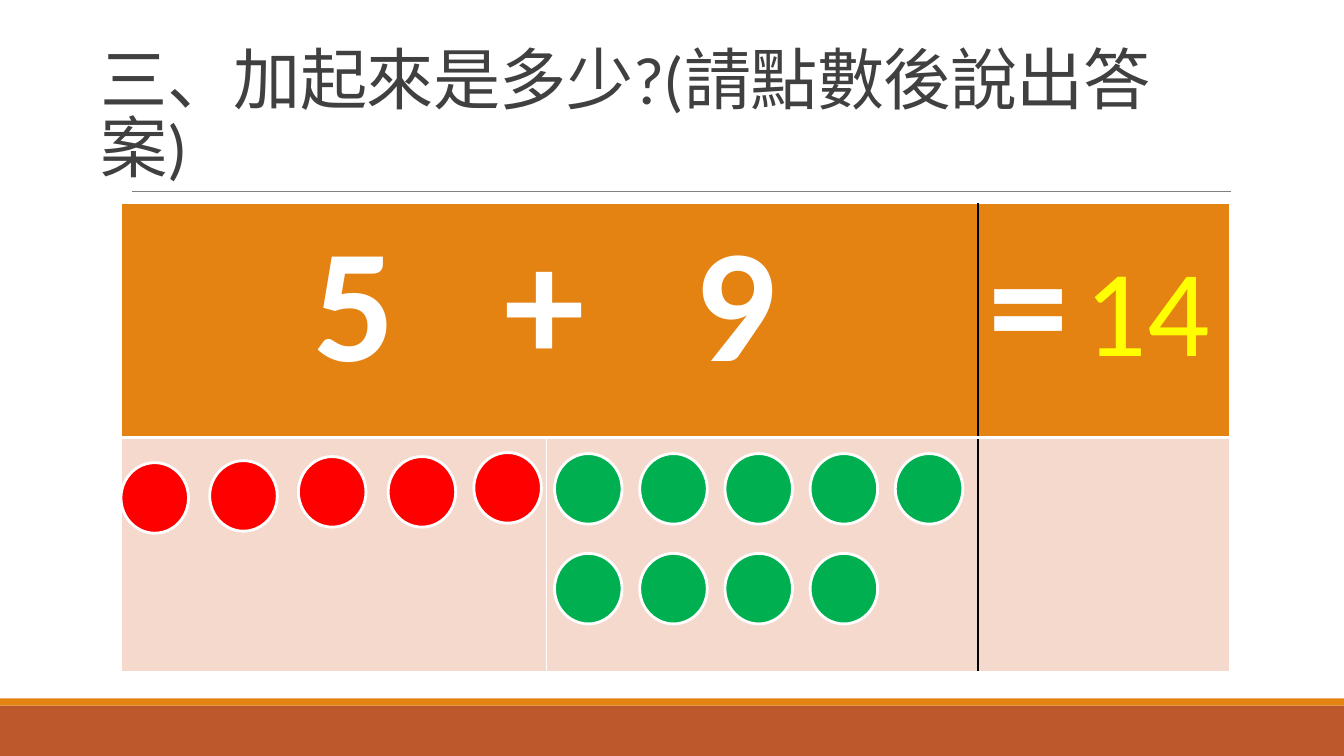
from lxml import etree
from pptx import Presentation
from pptx.dml.color import RGBColor
from pptx.enum.shapes import MSO_CONNECTOR, MSO_SHAPE
from pptx.enum.text import MSO_ANCHOR, MSO_AUTO_SIZE, PP_ALIGN
from pptx.oxml.ns import qn
from pptx.util import Inches, Pt

RECTANGLE = MSO_SHAPE.RECTANGLE
OVAL = MSO_SHAPE.OVAL
STRAIGHT = MSO_CONNECTOR.STRAIGHT
TOP = MSO_ANCHOR.TOP
BOTTOM = MSO_ANCHOR.BOTTOM
LEFT = PP_ALIGN.LEFT
CENTER = PP_ALIGN.CENTER
FIT_SHAPE = MSO_AUTO_SIZE.SHAPE_TO_FIT_TEXT
NO_FIT = MSO_AUTO_SIZE.NONE

WHITE, BLACK = "FFFFFF", "000000"
ORANGE, RUST, BLUSH = "E48312", "BD582C", "F5D9CC"
RED, GREEN, YELLOW = "FF0000", "00B050", "FFFF00"
DARK_GRAY, GRAY = "404040", "808080"


def color(value):
    return RGBColor.from_string(value)


class SlideBuilder:
    font = "Calibri"

    def __init__(self, slide):
        self.slide = slide

    def run(self, paragraph, text, size, fill, bold=False, spacing=None):
        run = paragraph.add_run()
        run.text = text
        run.font.name = self.font
        run.font.size = Pt(size)
        run.font.bold = bold
        run.font.color.rgb = color(fill)
        if spacing is not None:
            run._r.get_or_add_rPr().set("spc", str(int(spacing * 100)))

    def shape(self, kind, left, top, width, height, fill, outline=None):
        shape = self.slide.shapes.add_shape(
            kind, Inches(left), Inches(top), Inches(width), Inches(height))
        shape.shadow.inherit = False
        shape.fill.solid()
        shape.fill.fore_color.rgb = color(fill)
        if outline:
            shape.line.color.rgb = color(outline)
            shape.line.width = Pt(2)
        else:
            shape.line.fill.background()

    def line(self, left, right, top, fill, width):
        connector = self.slide.shapes.add_connector(
            STRAIGHT, Inches(left), Inches(top), Inches(right), Inches(top))
        connector.line.color.rgb = color(fill)
        connector.line.width = Pt(width)
        etree.SubElement(connector._element.spPr, qn("a:effectLst"))

    def text(self, left, top, width, height, text, size, fill, anchor=TOP,
             align=LEFT, fit=NO_FIT, line_spacing=None, spacing=None):
        box = self.slide.shapes.add_textbox(
            Inches(left), Inches(top), Inches(width), Inches(height))
        frame = box.text_frame
        frame.word_wrap = True
        frame.auto_size = fit
        frame.vertical_anchor = anchor
        paragraph = frame.paragraphs[0]
        paragraph.alignment = align
        paragraph.line_spacing = line_spacing
        self.run(paragraph, text, size, fill, spacing=spacing)

    def table(self, left, top, columns, rows):
        table = self.slide.shapes.add_table(
            len(rows), len(columns), Inches(left), Inches(top),
            Inches(sum(columns)), Inches(sum(rows))).table
        table.horz_banding = False
        for column, width in zip(table.columns, columns):
            column.width = Inches(width)
        for row, height in zip(table.rows, rows):
            row.height = Inches(height)
        return table

    def cell(self, cell, fill, left=WHITE, right=WHITE, bottom_width=1):
        properties = cell._tc.get_or_add_tcPr()
        borders = (("L", left, 1), ("R", right, 1),
                   ("T", WHITE, 1), ("B", WHITE, bottom_width))
        for side, border, width in borders:
            line = etree.SubElement(
                properties, qn(f"a:ln{side}"), w=str(Pt(width)))
            solid = etree.SubElement(line, qn("a:solidFill"))
            etree.SubElement(solid, qn("a:srgbClr"), val=border)
        cell.fill.solid()
        cell.fill.fore_color.rgb = color(fill)

    def tabs(self, paragraph, positions):
        tab_list = etree.SubElement(
            paragraph._p.get_or_add_pPr(), qn("a:tabLst"))
        for position in positions:
            etree.SubElement(tab_list, qn("a:tab"),
                             pos=str(Inches(position)), algn="l")

    def counter(self, left, top, fill):
        self.shape(OVAL, left, top, 0.67, 0.7, fill, WHITE)


def add_sum_table(builder):
    table = builder.table(1.2, 2.02, [4.22, 4.28, 2.5], [2.32, 2.32])
    for row, (fill, bottom_width) in enumerate([(ORANGE, 3), (BLUSH, 1)]):
        builder.cell(table.cell(row, 0), fill, bottom_width=bottom_width,
                     right=WHITE if row else BLACK)
        builder.cell(table.cell(row, 1), fill, right=BLACK,
                     bottom_width=bottom_width)
        builder.cell(table.cell(row, 2), fill, left=BLACK,
                     bottom_width=bottom_width)
    addends = table.cell(0, 0)
    addends.merge(table.cell(0, 1))
    addends.margin_left = Inches(1.91)
    for cell, text in ((addends, "5\t+\t9"), (table.cell(0, 2), "=")):
        builder.run(cell.text_frame.paragraphs[0], text, 115, WHITE, bold=True)
    builder.tabs(addends.text_frame.paragraphs[0], [1.89, 3.78])


def main():
    presentation = Presentation()
    presentation.slide_width = Inches(13.33)
    presentation.slide_height = Inches(7.5)
    slide = presentation.slides.add_slide(presentation.slide_layouts[6])
    builder = SlideBuilder(slide)

    builder.shape(RECTANGLE, 0, 7, 13.33, 0.5, RUST)
    builder.shape(RECTANGLE, 0, 6.93, 13.33, 0.07, ORANGE)
    builder.line(1.31, 12.21, 1.9, GRAY, 0.5)
    builder.text(0.9, 0.31, 11.3, 1.59, "三、加起來是多少?(請點數後說出答案)",
                 48, DARK_GRAY, anchor=BOTTOM, line_spacing=0.85, spacing=-0.5)
    add_sum_table(builder)

    red_places = [(1.2, 4.59), (2.08, 4.57), (2.96, 4.53),
                  (3.85, 4.53), (4.7, 4.49)]
    for left, top in red_places:
        builder.counter(left, top, RED)
    for index in range(9):
        row, column = divmod(index, 5)
        builder.counter(5.5 + 0.845 * column, 4.5 + 0.99 * row, GREEN)

    builder.text(10.63, 2.27, 1.5, 1.58, "14", 88, YELLOW,
                 align=CENTER, fit=FIT_SHAPE)
    presentation.save("out.pptx")


if __name__ == "__main__":
    main()
